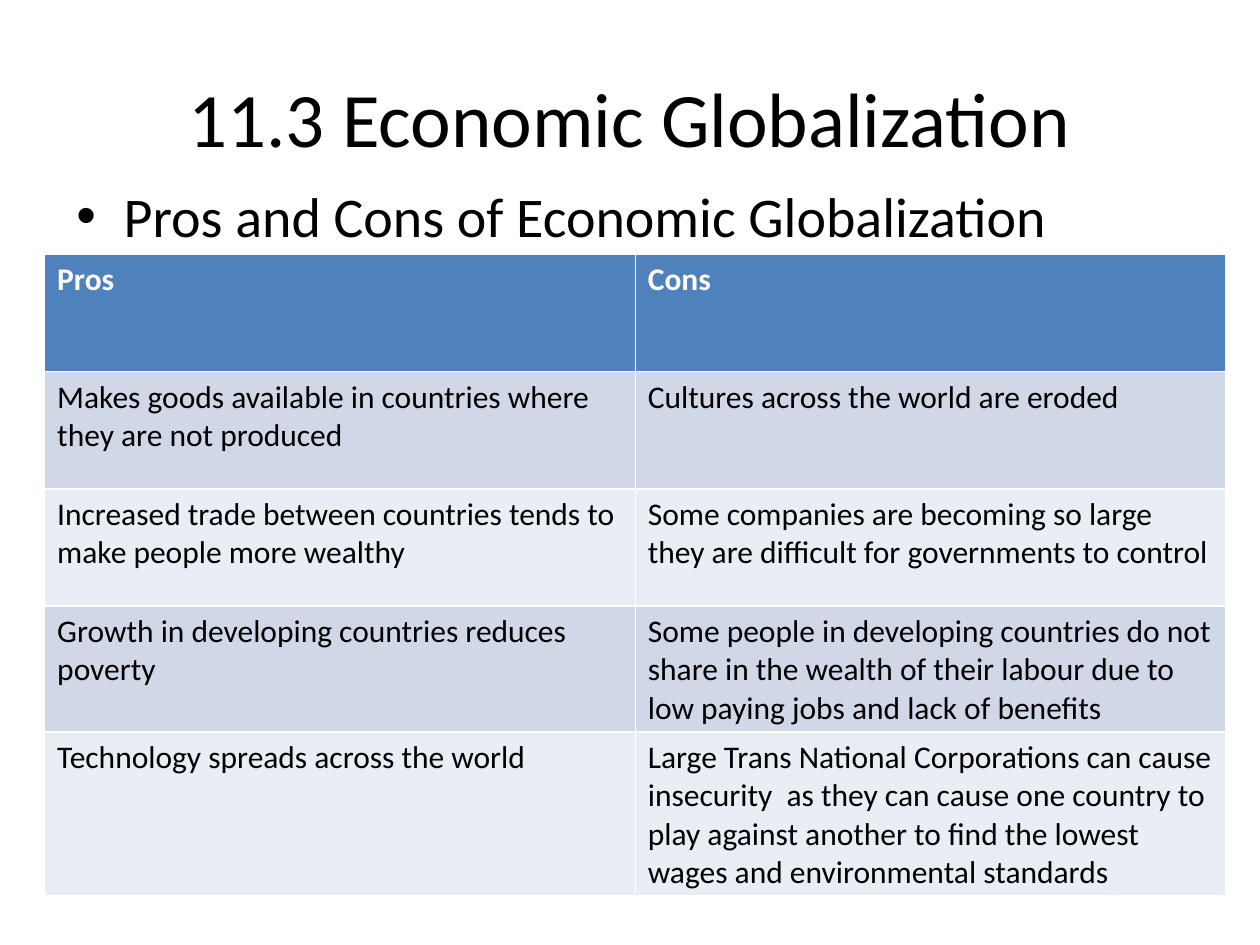
"""Build the slide on the pros and cons of economic globalization."""
from dataclasses import dataclass

from lxml import etree
from pptx import Presentation
from pptx.dml.color import RGBColor
from pptx.enum.text import MSO_ANCHOR, PP_ALIGN
from pptx.oxml.ns import qn
from pptx.util import Pt

CENTER, LEFT = PP_ALIGN.CENTER, PP_ALIGN.LEFT
MIDDLE, TOP = MSO_ANCHOR.MIDDLE, MSO_ANCHOR.TOP

TITLE = "11.3 Economic Globalization"
TOPIC = "Pros and Cons of Economic Globalization"
ARGUMENTS = [
    ("Pros", "Cons"),
    ("Makes goods available in countries where they are not produced",
     "Cultures across the world are eroded"),
    ("Increased trade between countries tends to make people more wealthy",
     "Some companies are becoming so large they are difficult for governments to control"),
    ("Growth in developing countries reduces poverty",
     "Some people in developing countries do not share in the wealth of their labour "
     "due to low paying jobs and lack of benefits"),
    ("Technology spreads across the world",
     "Large Trans National Corporations can cause insecurity  as they can cause one "
     "country to play against another to find the lowest wages and environmental standards"),
]

SLIDE_SIZE = (720, 540)
TITLE_BOX = (36, 21.6, 648, 90)
TOPIC_BOX = (36.6, 100, 648, 356.4)
TABLE_ORIGIN = (25.5, 145.5)
COLUMN_WIDTH, ROW_HEIGHT = 337.5, 66.9
BULLET_INDENT = 27


@dataclass(frozen=True)
class Theme:
    font: str = "Calibri"
    ink: str = "000000"
    header_ink: str = "FFFFFF"
    header_fill: str = "4F81BD"
    bands: tuple = ("D0D8E8", "E9EDF4")
    title_size: int = 44
    topic_size: int = 32
    cell_size: int = 18


THEME = Theme()


def write(frame, text, size, color, bold=False, align=LEFT):
    paragraph = frame.paragraphs[0]
    paragraph.text = text
    paragraph.alignment = align
    font = paragraph.font
    font.name, font.size, font.bold = THEME.font, Pt(size), bold
    font.color.rgb = RGBColor.from_string(color)
    return paragraph


def add_text(slide, box, text, size, align=LEFT, anchor=TOP):
    frame = slide.shapes.add_textbox(*map(Pt, box)).text_frame
    frame.word_wrap = True
    frame.vertical_anchor = anchor
    return write(frame, text, size, THEME.ink, align=align)


def add_bullet(paragraph):
    properties = paragraph._p.get_or_add_pPr()
    properties.set("marL", str(Pt(BULLET_INDENT)))
    properties.set("indent", str(-Pt(BULLET_INDENT)))
    bullet_font = etree.Element(qn("a:buFont"), typeface="Arial")
    bullet = etree.Element(qn("a:buChar"), char="•")
    properties.insert(0, bullet_font)
    bullet_font.addnext(bullet)


def add_arguments(slide):
    row_count, column_count = len(ARGUMENTS), len(ARGUMENTS[0])
    extent = (COLUMN_WIDTH * column_count, ROW_HEIGHT * row_count)
    table = slide.shapes.add_table(
        row_count, column_count, *map(Pt, TABLE_ORIGIN + extent)).table
    for row_index, row in enumerate(ARGUMENTS):
        is_header = row_index == 0
        fill = THEME.header_fill if is_header else THEME.bands[(row_index - 1) % 2]
        ink = THEME.header_ink if is_header else THEME.ink
        for column_index, argument in enumerate(row):
            cell = table.cell(row_index, column_index)
            cell.fill.solid()
            cell.fill.fore_color.rgb = RGBColor.from_string(fill)
            write(cell.text_frame, argument, THEME.cell_size, ink, is_header)


def main():
    deck = Presentation()
    deck.slide_width, deck.slide_height = map(Pt, SLIDE_SIZE)
    slide = deck.slides.add_slide(deck.slide_layouts[6])
    topic = add_text(slide, TOPIC_BOX, TOPIC, THEME.topic_size)
    topic.space_before = Pt(THEME.topic_size * 0.2)
    add_bullet(topic)
    add_text(slide, TITLE_BOX, TITLE, THEME.title_size, CENTER, MIDDLE)
    add_arguments(slide)
    deck.save("out.pptx")


if __name__ == "__main__":
    main()
